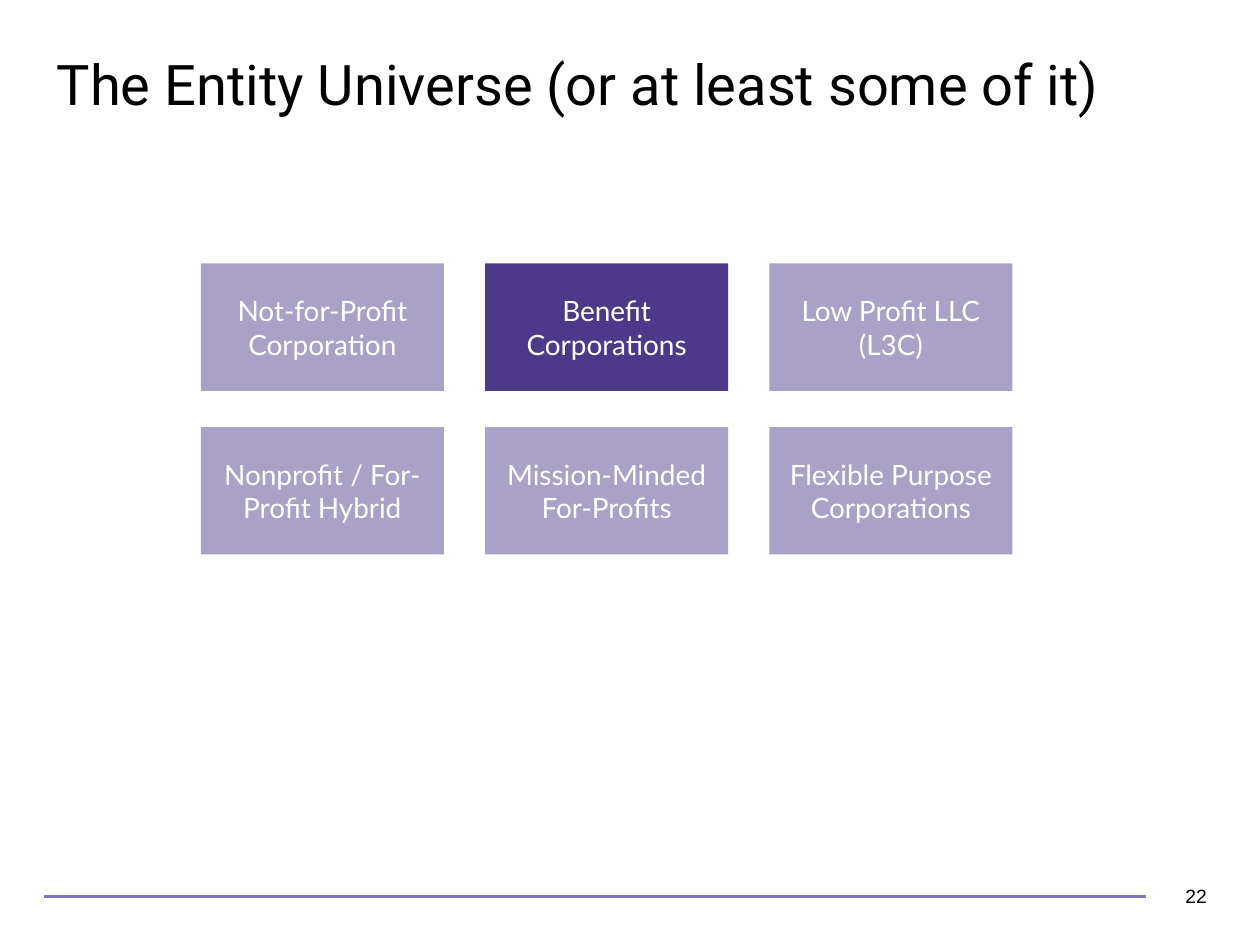
from lxml import etree
from pptx import Presentation
from pptx.dml.color import RGBColor
from pptx.enum.shapes import MSO_CONNECTOR, MSO_SHAPE
from pptx.enum.text import MSO_ANCHOR, MSO_AUTO_SIZE, PP_ALIGN
from pptx.oxml.ns import qn
from pptx.util import Cm, Pt

RECT = MSO_SHAPE.RECTANGLE
STRAIGHT = MSO_CONNECTOR.STRAIGHT
TOP, MIDDLE = MSO_ANCHOR.TOP, MSO_ANCHOR.MIDDLE
LEFT, CENTER, RIGHT = PP_ALIGN.LEFT, PP_ALIGN.CENTER, PP_ALIGN.RIGHT
NO_FIT = MSO_AUTO_SIZE.NONE


def color(value):
    return RGBColor.from_string(value)


def write(tf, text, font="Arial", size=16, fill="000000", align=LEFT,
          anchor=MIDDLE, spacing=None):
    tf.word_wrap = True
    tf.auto_size = NO_FIT
    tf.vertical_anchor = anchor
    p = tf.paragraphs[0]
    p.alignment = align
    p.line_spacing = spacing
    r = p.add_run()
    r.text = text
    r.font.name = font
    r.font.size = Pt(size)
    r.font.color.rgb = color(fill)


class EntitySlide:
    purple = "4C3989"
    rule_color = "8275B4"
    faded = 47  # percent opacity of the boxes that are not in focus

    def __init__(self, prs):
        self.s = prs.slides.add_slide(prs.slide_layouts[5])

    def title(self, text, x, y, w, h):
        sp = self.s.shapes.title
        sp.left, sp.top, sp.width, sp.height = Cm(x), Cm(y), Cm(w), Cm(h)
        write(sp.text_frame, text, font="Roboto", size=32, anchor=TOP,
              spacing=0.9)

    def rule(self, x1, x2, y):
        line = self.s.shapes.add_connector(STRAIGHT, Cm(x1), Cm(y), Cm(x2), Cm(y))
        line.line.color.rgb = color(self.rule_color)
        line.line.width = Pt(1.75)
        etree.SubElement(line._element.spPr, qn("a:effectLst"))

    def page_number(self, text, x, y, w, h):
        sp = self.s.shapes.add_textbox(Cm(x), Cm(y), Cm(w), Cm(h))
        write(sp.text_frame, text, size=11, align=RIGHT)

    def box(self, text, x, y, w, h, focus=False):
        sp = self.s.shapes.add_shape(RECT, Cm(x), Cm(y), Cm(w), Cm(h))
        sp.shadow.inherit = False
        sp.line.fill.background()
        sp.fill.solid()
        sp.fill.fore_color.rgb = color(self.purple)
        if not focus:
            clr = sp._element.spPr.find(qn("a:solidFill"))[0]
            etree.SubElement(clr, qn("a:alpha"), val=str(self.faded * 1000))
        write(sp.text_frame, text, font="Lato", fill="FFFFFF", align=CENTER)


def main():
    prs = Presentation()
    prs.slide_width, prs.slide_height = Cm(25.4), Cm(19.05)
    slide = EntitySlide(prs)

    # Footer rule, title and page number
    slide.rule(0.89, 23.11, 18.08)
    slide.title("The Entity Universe (or at least some of it)",
                0.89, 1.02, 23.72, 2.06)
    slide.page_number("22", 22.5, 17.55, 2.08, 1.02)

    # Grid of entity types
    entities = [
        ["Not-for-Profit Corporation", "Benefit Corporations",
         "Low Profit LLC (L3C)"],
        ["Nonprofit / For-Profit Hybrid", "Mission-Minded For-Profits",
         "Flexible Purpose Corporations"],
    ]
    left, top, width, height = 4.05, 5.31, 4.9, 2.57
    step_x, step_y = 5.73, 3.3
    for row, names in enumerate(entities):
        for col, name in enumerate(names):
            slide.box(name, left + col * step_x, top + row * step_y,
                      width, height, focus=name == "Benefit Corporations")

    prs.save("out.pptx")


if __name__ == "__main__":
    main()
